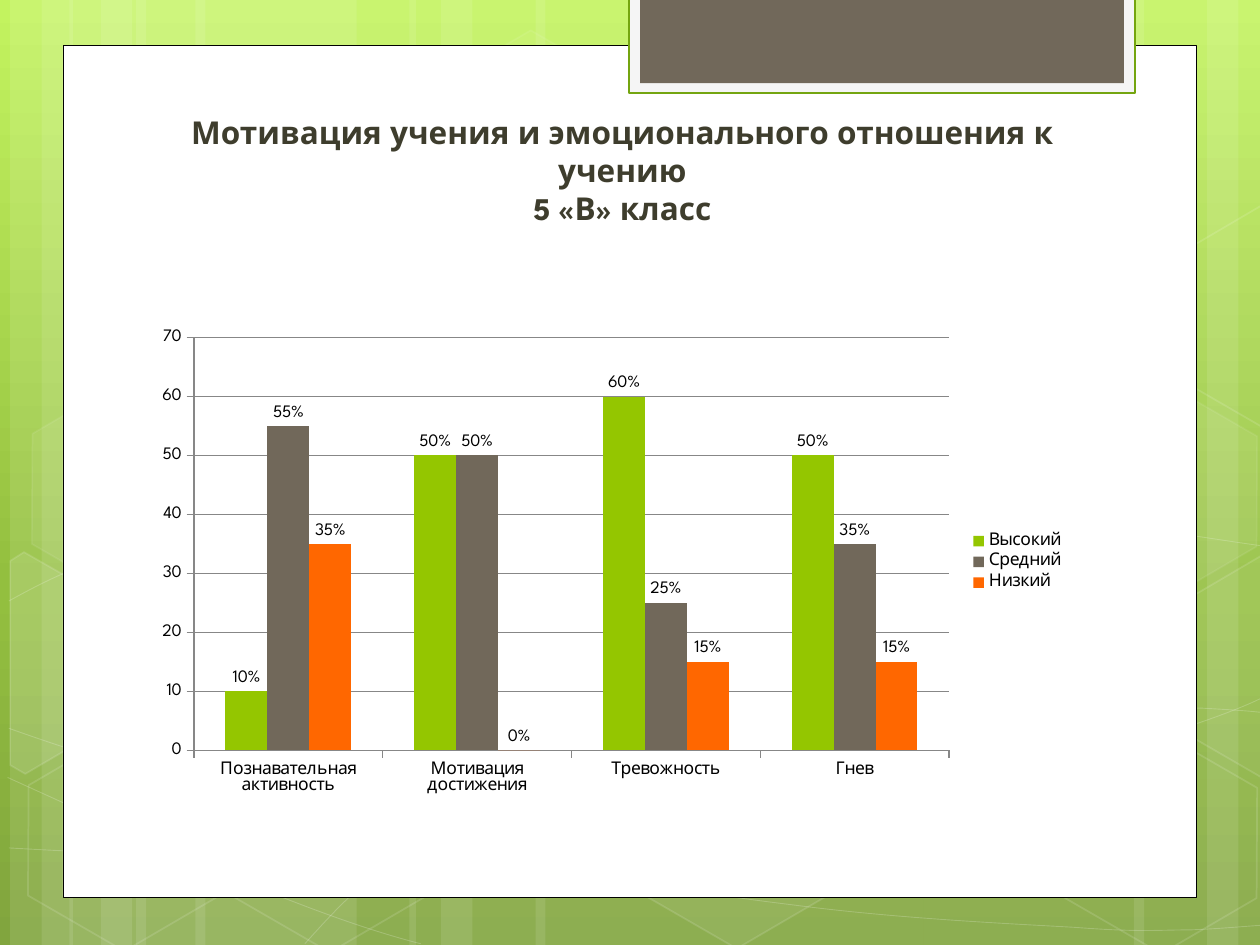
"""Build a slide with a clustered column chart on learning motivation in one class."""
import math
from copy import deepcopy

from lxml import etree
from pptx import Presentation
from pptx import util as u
from pptx.chart.data import CategoryChartData
from pptx.dml.color import RGBColor
from pptx.enum import chart as c, shapes as s, text as t
from pptx.oxml.ns import qn

COLUMNS, ROWS = 10, 7.5
FONT = "League Spartan"
TILT = 30
WHITE = RGBColor(0xFF, 0xFF, 0xFF)
BLACK = RGBColor(0, 0, 0)
GREEN = RGBColor(0x94, 0xC6, 0x00)
DARK_GREEN = RGBColor(0x74, 0xA5, 0x10)
BROWN = RGBColor(0x71, 0x68, 0x5A)
ORANGE = RGBColor(0xFF, 0x67, 0x00)
PALE = RGBColor(0xF5, 0xF5, 0xF5)
OLIVE = RGBColor(0x3E, 0x3D, 0x2D)
GRID = RGBColor(0x87, 0x87, 0x87)
BACKDROP = [(0, RGBColor(0xC3, 0xF3, 0x5F)), (0.62, RGBColor(0x93, 0xBF, 0x3F)),
            (1, RGBColor(0x81, 0xA5, 0x3E))]

TITLE = "Мотивация учения и эмоционального отношения к учению\v5 «В» класс"
CATEGORIES = ["Познавательная активность", "Мотивация достижения", "Тревожность", "Гнев"]
SERIES = [("Высокий", (10, 50, 60, 50), GREEN),
          ("Средний", (55, 50, 25, 35), BROWN),
          ("Низкий", (35, 0, 15, 15), ORANGE)]

BANDS = [(1.08, 1.75), (0.08, 0.5), (0.33, 0.83), (1.55, 1.75), (0.55, 0.5), (0.8, 0.83),
         (7.33, 1.75), (9.58, 0.5), (9, 0.83), (4.25, 3.08), (3.25, 0.5), (3.5, 0.83)]
CURVES = [
    [(0.07, 6.73), (0.61, 6.76), (1.15, 6.79), (1.9, 6.78), (2.65, 6.77), (3.58, 6.75),
     (4.58, 6.65), (5.58, 6.55), (7, 6.36), (7.92, 6.17), (8.83, 5.98), (9.77, 5.68), (10.07, 5.51)],
    [(0.07, 4.77), (0.36, 4.61), (0.65, 4.46), (1.21, 4.31), (1.78, 4.16), (2.59, 3.94),
     (3.47, 3.87), (4.36, 3.8), (5.44, 3.79), (6.54, 3.87), (7.64, 3.95), (9.47, 4.26), (10.07, 4.34)],
    [(0.06, 6.17), (1.27, 6.72), (2.47, 7.27), (3.34, 7.49)],
    [(0.07, 5.78), (0.38, 5.89), (0.7, 6), (1.28, 6.16), (1.86, 6.31), (2.73, 6.56), (3.57, 6.73),
     (4.4, 6.9), (5.45, 7.08), (6.28, 7.18), (7.11, 7.29), (8, 7.33), (8.53, 7.36),
     (9.05, 7.4), (9.19, 7.38), (9.45, 7.38), (9.71, 7.37), (9.89, 7.35), (10.07, 7.34)],
    [(2.42, 7.49), (2.6, 7.29), (2.78, 7.09), (3.02, 6.91), (3.26, 6.73), (3.6, 6.53), (3.88, 6.39),
     (4.16, 6.25), (4.33, 6.19), (4.7, 6.09), (5.06, 5.99), (5.73, 5.85), (6.08, 5.78),
     (6.44, 5.71), (6.49, 5.71), (6.8, 5.69), (7.11, 5.66), (7.6, 5.63), (7.94, 5.62),
     (8.29, 5.61), (8.86, 5.62), (8.86, 5.62), (9.08, 5.62), (9.31, 5.62), (9.53, 5.62),
     (9.71, 5.63), (9.88, 5.64), (9.97, 5.65), (10.06, 5.66), (10.03, 5.65), (10.06, 5.66)],
]
CUT_LEFT = [(0.08, 4.45), (0.19, 4.38), (0.96, 4.82), (0.95, 5.7), (0.2, 6.14), (0.08, 6.07)]
CUT_RIGHT = [(9.26, 4.85), (10.01, 4.41), (10.09, 4.46), (10.09, 6.13), (10.02, 6.17), (9.26, 5.73)]
CUT_TOP = [(x, round(y - 2.78, 2)) for x, y in CUT_RIGHT]
HEXAGONS = [((3.34, 0.36), 4, 8), ((4.97, 5.89), 6, 12), (CUT_LEFT, 10, 12), ((0.11, 5.91), 0, 12),
            ((0.14, 3.12), 7, 8), ((1.74, 5.92), 0, 12), ((7.53, 4.53), 10, 12),
            ((8.34, 5.93), 0, 12), ((8.34, 3.14), 7, 8), (CUT_RIGHT, 4, 12), (CUT_TOP, 0, 12)]
CUT_CENTERS = [(CUT_LEFT, (0.36, 5.35)), (CUT_RIGHT, (9.85, 5.2)), (CUT_TOP, (9.85, 2.41))]
PANELS = [((0.5, 0.36, 9, 6.76), WHITE, BLACK, 0.5),
          ((4.99, -0.02, 4.02, 0.76), PALE, DARK_GREEN, 1.25),
          ((5.08, -0.02, 3.84, 0.68), BROWN, None, 0)]
TITLE_BOX = (1.06, 0.89, 7.76, 0.92)
CHART_BOX = (1.14, 2.54, 7.41, 3.84)


def inches(values):
    return [u.Inches(value) for value in values]


def assign(target, values):
    for name, value in values.items():
        setattr(target, name, value)


def set_color(fill, color, opacity):
    fill.solid()
    fill.fore_color.rgb = color
    if opacity < 100:
        node = fill._xPr.find(qn("a:solidFill"))[0]
        etree.SubElement(node, qn("a:alpha"), val=str(opacity * 1000))


def paint(shape, fill=WHITE, opacity=100, line=None, width=1, line_opacity=100):
    shape.shadow.inherit = False
    if opacity:
        set_color(shape.fill, fill, opacity)
    else:
        shape.fill.background()
    if line is None:
        shape.line.fill.background()
    else:
        shape.line.width = u.Pt(width)
        set_color(shape.line.fill, line, line_opacity)


def add_preset(slide, kind, box, **style):
    shape = slide.shapes.add_shape(kind, *inches(box))
    paint(shape, **style)
    return shape


def add_outline(slide, points, close, **style):
    start, *rest = [inches(point) for point in points]
    builder = slide.shapes.build_freeform(*start)
    builder.add_line_segments(rest, close=close)
    shape = builder.convert_to_shape()
    paint(shape, **style)
    return shape


def bend(shape):
    segments = shape._element.xpath(".//a:lnTo")
    for first in range(0, len(segments), 3):
        group = segments[first:first + 3]
        curve = etree.Element(qn("a:cubicBezTo"))
        group[0].addprevious(curve)
        for segment in group:
            curve.append(segment[0])
            segment.getparent().remove(segment)


def turn_back(points, center):
    cosine, sine = math.cos(math.radians(TILT)), math.sin(math.radians(TILT))
    offsets = [(x - center[0], y - center[1]) for x, y in points]
    return [(center[0] + x * cosine + y * sine, center[1] + y * cosine - x * sine)
            for x, y in offsets]


def add_hexagon(slide, place, **style):
    for points, center in CUT_CENTERS:
        if place is points:
            hexagon = add_outline(slide, turn_back(points, center), True, **style)
            break
    else:
        hexagon = add_preset(slide, s.MSO_SHAPE.HEXAGON, (*place, 1.75, 1.52), **style)
        hexagon.adjustments[0], hexagon.adjustments[1] = 0.285, 1.155
    hexagon.rotation = TILT


def add_backdrop(slide):
    fill = slide.background.fill
    fill.gradient()
    fill.gradient_angle = 270
    stop_list = slide._element.xpath(".//a:gsLst")[0]
    stop_list.append(deepcopy(stop_list[0]))
    for stop, (position, color) in zip(fill.gradient_stops, BACKDROP):
        stop.position = position
        stop.color.rgb = color
    for left, width in BANDS:
        add_preset(slide, s.MSO_SHAPE.RECTANGLE, (left, 0, width, ROWS), opacity=10)
    for points in CURVES:
        bend(add_outline(slide, points, False, opacity=0, line=WHITE, width=0.5, line_opacity=20))
    for place, opacity, line_opacity in HEXAGONS:
        add_hexagon(slide, place, opacity=opacity, line=WHITE, line_opacity=line_opacity)
    for box, fill_color, line, width in PANELS:
        add_preset(slide, s.MSO_SHAPE.RECTANGLE, box, fill=fill_color, line=line, width=width)


def add_title(slide):
    frame = slide.shapes.add_textbox(*inches(TITLE_BOX)).text_frame
    assign(frame, dict(word_wrap=True, margin_top=0, margin_bottom=0,
                       vertical_anchor=t.MSO_ANCHOR.MIDDLE, text=TITLE))
    paragraph = frame.paragraphs[0]
    paragraph.alignment = t.PP_ALIGN.CENTER
    for run in paragraph.runs:
        assign(run.font, dict(name=FONT, size=u.Pt(18), bold=True))
        run.font.color.rgb = OLIVE


def add_motivation_chart(slide):
    data = CategoryChartData()
    data.categories = CATEGORIES
    for name, values, _ in SERIES:
        data.add_series(name, values)
    chart = slide.shapes.add_chart(c.XL_CHART_TYPE.COLUMN_CLUSTERED, *inches(CHART_BOX), data).chart
    assign(chart, dict(has_title=False, has_legend=True))
    assign(chart.font, dict(name=FONT, size=u.Pt(10)))
    chart.font.color.rgb = BLACK
    assign(chart.legend, dict(position=c.XL_LEGEND_POSITION.RIGHT, include_in_layout=False))
    assign(chart.value_axis, dict(minimum_scale=0, maximum_scale=70, major_unit=10))
    for axis in (chart.category_axis, chart.value_axis):
        axis.major_tick_mark = c.XL_TICK_MARK.OUTSIDE
        axis.format.line.color.rgb = GRID
    chart.value_axis.major_gridlines.format.line.color.rgb = GRID
    plot = chart.plots[0]
    assign(plot, dict(gap_width=150, overlap=0, vary_by_categories=False, has_data_labels=True))
    assign(plot.data_labels, dict(show_value=True, number_format='0"%"', number_format_is_linked=False,
                                  position=c.XL_LABEL_POSITION.OUTSIDE_END))
    for series, (_, _, color) in zip(plot.series, SERIES):
        set_color(series.format.fill, color, 100)


presentation = Presentation()
assign(presentation, dict(slide_width=u.Inches(COLUMNS), slide_height=u.Inches(ROWS)))
main_slide = presentation.slides.add_slide(presentation.slide_layouts[6])
add_backdrop(main_slide)
add_title(main_slide)
add_motivation_chart(main_slide)
presentation.save("out.pptx")
